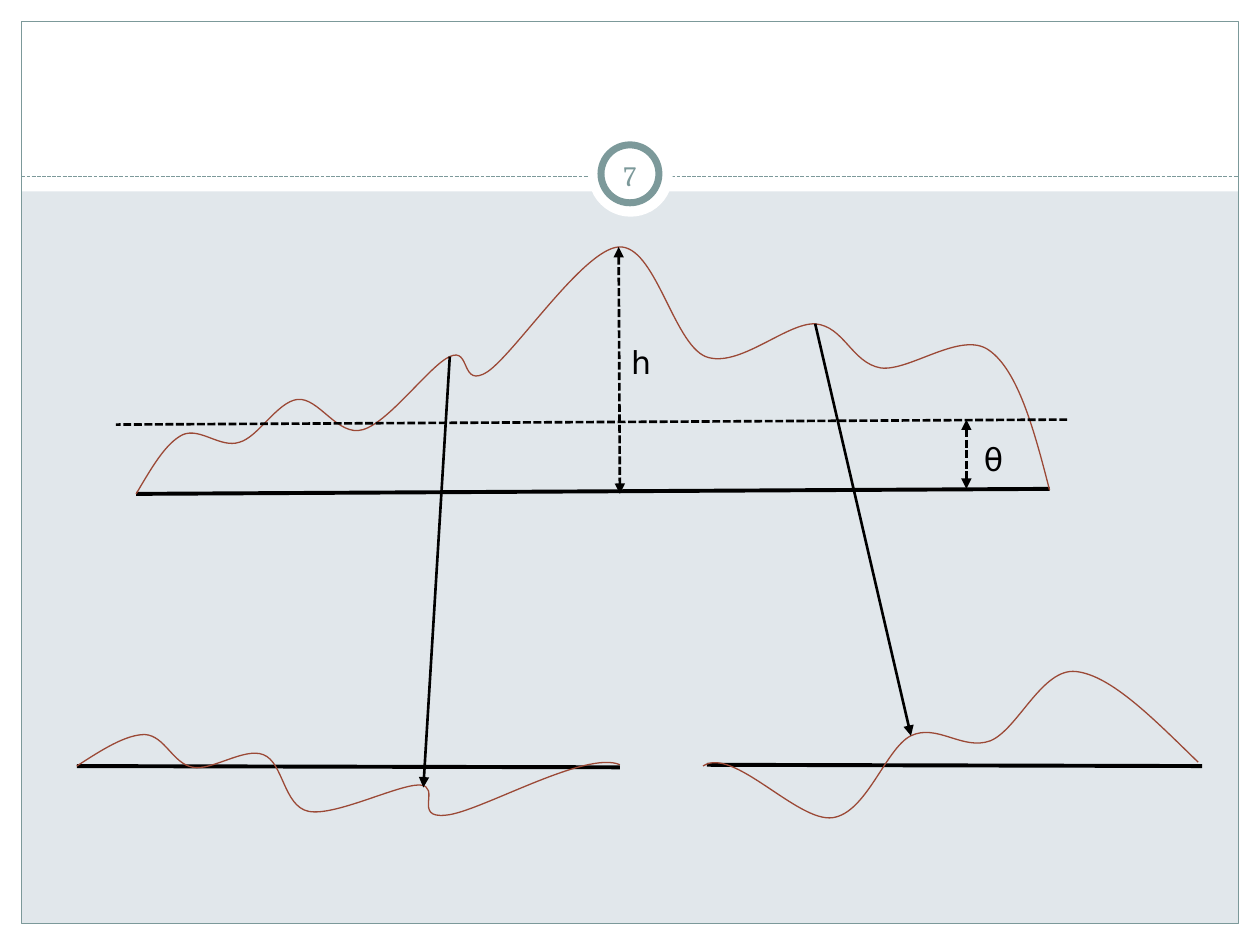
from dataclasses import dataclass

from lxml import etree
from pptx import Presentation
from pptx import util as u
from pptx.dml.color import RGBColor
from pptx.enum import dml, shapes, text
from pptx.oxml.ns import qn


@dataclass(frozen=True)
class Theme:
    """Colours, fonts and sizes of the slide."""

    paper: str = "FFFFFF"
    backdrop: str = "E1E7EB"
    accent: str = "7C999A"
    curve: str = "9B4936"
    ink: str = "000000"
    number_font: str = "Cambria"
    label_font: str = "DejaVu Sans"
    number_size: float = 16
    label_size: float = 18
    thin: float = 0.75
    medium: float = 1.5
    thick: float = 2.25
    ring: float = 4


THEME = Theme()
WIDTH, HEIGHT = 10, 7.5
MARGIN = 0.17
HEADER = 1.52

LABELS = [("θ", 7.71, 3.44), ("h", 4.91, 2.67)]
BASELINES = [
    ((8.33, 3.88), (1.08, 3.92)),
    ((4.92, 6.09), (0.61, 6.08)),
    ((9.54, 6.08), (5.61, 6.07)),
]
THRESHOLD = ((8.47, 3.33), (0.92, 3.37))
MEASURES = [((4.91, 1.96), (4.92, 3.92)), ((7.67, 3.33), (7.67, 3.88))]
SPLITS = [((3.57, 2.83), (3.36, 6.25)), ((6.47, 2.57), (7.23, 5.84))]

MOUNTAIN = [
    (1.08, 3.92),
    (1.2, 3.72), (1.31, 3.52), (1.45, 3.45),
    (1.59, 3.39), (1.75, 3.56), (1.9, 3.51),
    (2.05, 3.47), (2.2, 3.19), (2.36, 3.17),
    (2.53, 3.15), (2.68, 3.47), (2.88, 3.41),
    (3.09, 3.35), (3.41, 2.9), (3.57, 2.83),
    (3.74, 2.75), (3.65, 3.09), (3.87, 2.95),
    (4.09, 2.8), (4.63, 1.98), (4.91, 1.96),
    (5.2, 1.94), (5.34, 2.72), (5.6, 2.83),
    (5.86, 2.93), (6.24, 2.56), (6.47, 2.57),
    (6.7, 2.59), (6.76, 2.88), (6.99, 2.92),
    (7.22, 2.95), (7.63, 2.62), (7.85, 2.78),
    (8.08, 2.94), (8.21, 3.42), (8.33, 3.89),
]
LEFT_PART = [
    (0.61, 6.08),
    (0.81, 5.95), (1, 5.83), (1.15, 5.83),
    (1.31, 5.84), (1.37, 6.06), (1.53, 6.09),
    (1.68, 6.12), (1.94, 5.93), (2.09, 5.99),
    (2.25, 6.05), (2.25, 6.4), (2.45, 6.44),
    (2.66, 6.48), (3.15, 6.23), (3.33, 6.23),
    (3.51, 6.24), (3.27, 6.5), (3.54, 6.47),
    (3.8, 6.45), (4.65, 5.95), (4.92, 6.07),
]
RIGHT_PART = [
    (5.58, 6.08),
    (5.82, 5.92), (6.33, 6.53), (6.61, 6.49),
    (6.88, 6.45), (7.03, 5.94), (7.23, 5.84),
    (7.44, 5.74), (7.64, 5.96), (7.86, 5.88),
    (8.08, 5.79), (8.27, 5.3), (8.54, 5.33),
    (8.82, 5.36), (9.16, 5.71), (9.51, 6.05),
]


def inches(values):
    return tuple(u.Inches(value) for value in values)


def paint_line(line, color, width):
    line.color.rgb = RGBColor.from_string(color)
    line.width = u.Pt(width)


def add_block(page, kind, bounds, fill=None, line=None, width=THEME.thin):
    block = page.shapes.add_shape(kind, *inches(bounds))
    block.shadow.inherit = False
    if fill:
        block.fill.solid()
        block.fill.fore_color.rgb = RGBColor.from_string(fill)
    else:
        block.fill.background()
    if line:
        paint_line(block.line, line, width)
    else:
        block.line.fill.background()


def add_line(page, ends, color, width, dashed=False, arrows=()):
    start, finish = ends
    connector = page.shapes.add_connector(
        shapes.MSO_CONNECTOR.STRAIGHT, *inches(start + finish))
    paint_line(connector.line, color, width)
    if dashed:
        connector.line.dash_style = dml.MSO_LINE.SQUARE_DOT
    properties = connector._element.spPr
    outline = properties.find(qn("a:ln"))
    for arrow in arrows:
        etree.SubElement(outline, qn(f"a:{arrow}"), type="triangle")
    etree.SubElement(properties, qn("a:effectLst"))


def add_curve(page, points):
    start, *rest = [inches(point) for point in points]
    builder = page.shapes.build_freeform(*start)
    builder.add_line_segments(rest, close=False)
    curve = builder.convert_to_shape()
    curve.shadow.inherit = False
    curve.fill.background()
    paint_line(curve.line, THEME.curve, THEME.thin)
    outline = next(curve._element.iter(qn("a:path")))
    segments = outline.findall(qn("a:lnTo"))
    for first in range(0, len(segments), 3):
        bezier = etree.SubElement(outline, qn("a:cubicBezTo"))
        for segment in segments[first:first + 3]:
            bezier.append(segment[0])
            outline.remove(segment)


def add_text(page, words, bounds, font, size, color):
    box = page.shapes.add_textbox(*inches(bounds))
    frame = box.text_frame
    frame.word_wrap = True
    para = frame.paragraphs[0]
    para.text = words
    para.font.name = font
    para.font.size = u.Pt(size)
    para.font.color.rgb = RGBColor.from_string(color)
    return frame


def add_frame(page):
    rectangle, oval = shapes.MSO_SHAPE.RECTANGLE, shapes.MSO_SHAPE.OVAL
    for bounds in [
        (0, HEIGHT - MARGIN, WIDTH, MARGIN),
        (0, 0, WIDTH, HEADER),
        (0, 0, MARGIN, HEIGHT),
        (WIDTH - MARGIN, 0, MARGIN, HEIGHT),
    ]:
        add_block(page, rectangle, bounds, fill=THEME.paper)
    inner = (MARGIN, MARGIN, WIDTH - 2 * MARGIN, HEIGHT - 2 * MARGIN)
    add_block(page, rectangle, inner, line=THEME.accent)
    add_line(page, ((MARGIN, 1.4), (WIDTH - MARGIN, 1.4)),
             THEME.accent, THEME.thin, dashed=True)
    add_block(page, oval, (4.67, 1.05, 0.67, 0.67), fill=THEME.paper)
    add_block(page, oval, (4.77, 1.15, 0.46, 0.46), THEME.paper,
              THEME.accent, THEME.ring)
    number = add_text(page, "7", (4.75, 1.15, 0.5, 0.48), THEME.number_font,
                      THEME.number_size, THEME.accent)
    number.vertical_anchor = text.MSO_ANCHOR.MIDDLE
    number.paragraphs[0].alignment = text.PP_ALIGN.CENTER
    for side in ("left", "right", "top", "bottom"):
        setattr(number, f"margin_{side}", u.Inches(0.05))


def add_diagram(page):
    for ends in BASELINES:
        add_line(page, ends, THEME.ink, THEME.thick)
    for points in (MOUNTAIN, LEFT_PART, RIGHT_PART):
        add_curve(page, points)
    add_line(page, THRESHOLD, THEME.ink, THEME.medium, dashed=True)
    for ends in MEASURES:
        add_line(page, ends, THEME.ink, THEME.medium, True, ("headEnd", "tailEnd"))
    for ends in SPLITS:
        add_line(page, ends, THEME.ink, THEME.medium, arrows=("tailEnd",))
    for words, left, top in LABELS:
        label = add_text(page, words, (left, top, 0.42, 0.4), THEME.label_font,
                         THEME.label_size, THEME.ink)
        label.auto_size = text.MSO_AUTO_SIZE.SHAPE_TO_FIT_TEXT


def main():
    deck = Presentation()
    deck.slide_width, deck.slide_height = inches((WIDTH, HEIGHT))
    page = deck.slides.add_slide(deck.slide_layouts[6])
    page.background.fill.solid()
    page.background.fill.fore_color.rgb = RGBColor.from_string(THEME.backdrop)
    add_frame(page)
    add_diagram(page)
    deck.save("out.pptx")


if __name__ == "__main__":
    main()
